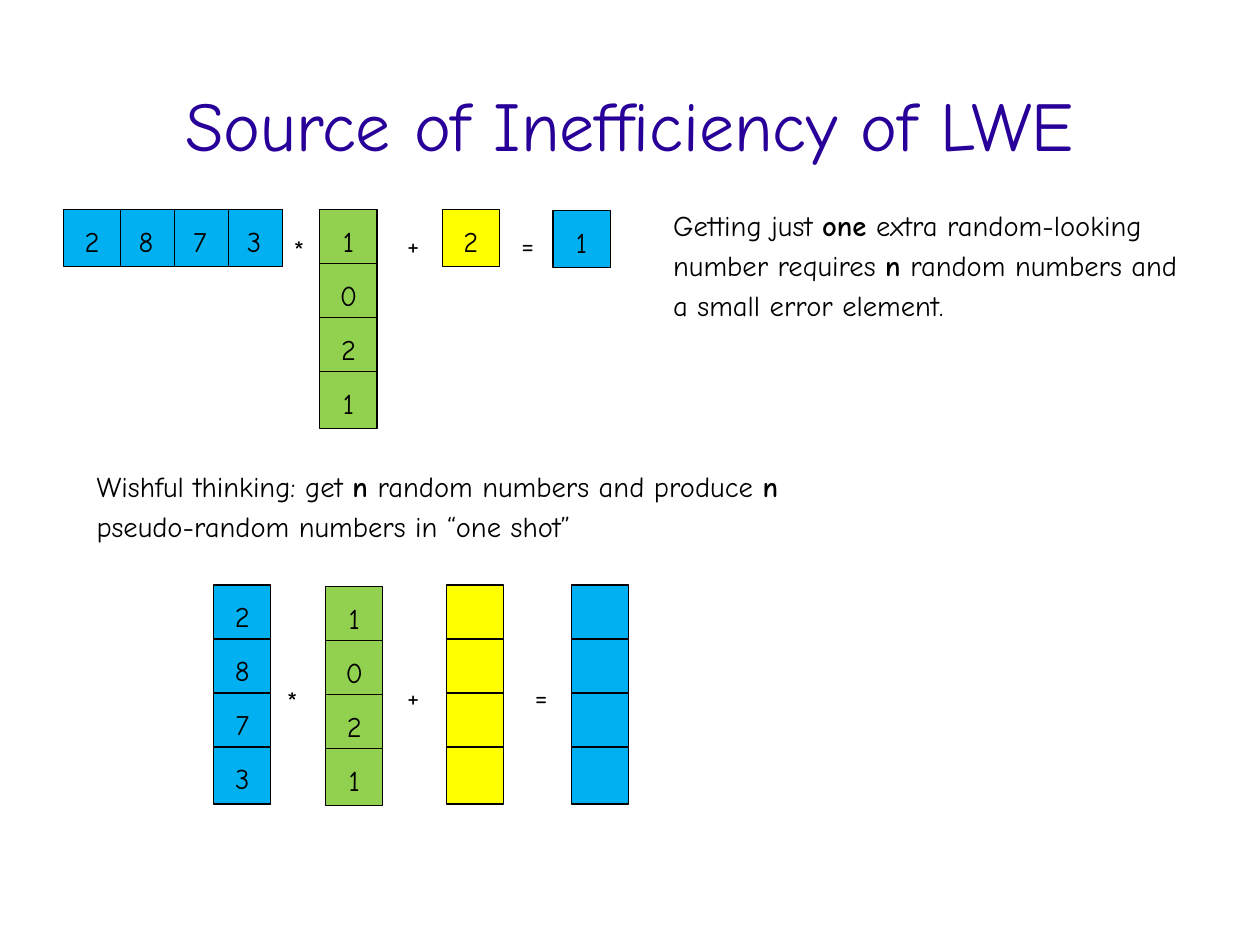
import pptx
import pptx.dml.color
import pptx.enum.shapes
import pptx.enum.text
import pptx.util
from dataclasses import dataclass

Cm = pptx.util.Cm
Pt = pptx.util.Pt
ALIGN = pptx.enum.text.PP_ALIGN
ANCHOR = pptx.enum.text.MSO_ANCHOR


@dataclass(frozen=True)
class Theme:
    font: str = "Comic Neue"
    title_size: int = 44
    body_size: int = 18
    line_spacing: float = 1.17
    title: str = "280099"
    ink: str = "000000"
    public: str = "00B0F0"
    secret: str = "92D050"
    error: str = "FFFF00"


THEME = Theme()
CELL = 1.27
PITCH = 1.2  # neighbouring cells overlap slightly


def rgb(value):
    return pptx.dml.color.RGBColor.from_string(value)


def write(frame, text, size=THEME.body_size, color=THEME.ink, align=ALIGN.LEFT):
    """Fill a frame with one paragraph; text between asterisk pairs is bold."""
    paragraph = frame.paragraphs[0]
    paragraph.alignment = align
    paragraph.line_spacing = THEME.line_spacing
    for index, part in enumerate(text.split("**")):
        run = paragraph.add_run()
        run.text = part
        font_format = {"name": THEME.font, "size": Pt(size), "bold": index % 2 == 1}
        for attribute, value in font_format.items():
            setattr(run.font, attribute, value)
        run.font.color.rgb = rgb(color)


def add_title(slide, left, top, width, height, text):
    title = slide.shapes.title
    place = {"left": left, "top": top, "width": width, "height": height}
    for attribute, value in place.items():
        setattr(title, attribute, Cm(value))
    frame_format = {
        "margin_left": 0, "margin_top": 0, "margin_right": 0, "margin_bottom": 0,
        "vertical_anchor": ANCHOR.MIDDLE,
        "auto_size": pptx.enum.text.MSO_AUTO_SIZE.NONE,
    }
    for attribute, value in frame_format.items():
        setattr(title.text_frame, attribute, value)
    write(title.text_frame, text, THEME.title_size, THEME.title, ALIGN.CENTER)


def add_note(slide, left, top, width, height, text):
    note = slide.shapes.add_textbox(Cm(left), Cm(top), Cm(width), Cm(height))
    note.text_frame.word_wrap = True
    write(note.text_frame, text)


def add_cell(slide, left, top, fill, number):
    cell = slide.shapes.add_shape(
        pptx.enum.shapes.MSO_SHAPE.RECTANGLE, Cm(left), Cm(top), Cm(CELL), Cm(CELL))
    cell.shadow.inherit = False
    cell.fill.solid()
    cell.fill.fore_color.rgb = rgb(fill)
    cell.line.color.rgb = rgb(THEME.ink)
    cell.line.width = Pt(0.75)
    if number.strip():
        cell.text_frame.word_wrap = False
        cell.text_frame.vertical_anchor = ANCHOR.MIDDLE
        write(cell.text_frame, number, align=ALIGN.CENTER)


def add_column(slide, left, top, fill, numbers):
    for index, number in enumerate(numbers):
        add_cell(slide, left, top + index * PITCH, fill, number)


def add_row(slide, left, top, fill, numbers):
    """Lay cells side by side, each one overlapping its right neighbour."""
    for index, number in reversed(list(enumerate(numbers))):
        add_cell(slide, left + index * PITCH, top, fill, number)


def add_equation(slide, left, top, vectors, operators):
    """Place vectors and operator signs at offsets from the top left corner."""
    for add_vector, dx, dy, fill, numbers in vectors:
        add_vector(slide, left + dx, top + dy, fill, numbers)
    for sign, dx, dy in operators:
        add_note(slide, left + dx, top + dy, 0.64, 1.14, sign)


def main():
    deck = pptx.Presentation()
    deck.slide_width, deck.slide_height = Cm(28), Cm(21)
    slide = deck.slides.add_slide(deck.slide_layouts[5])

    add_title(slide, 1.4, 0.97, 25.2, 3.25, "Source of Inefficiency of LWE")
    add_equation(
        slide, 1.41, 4.65,
        [(add_column, 5.7, 0, THEME.secret, "1021"),
         (add_row, 0, 0, THEME.public, "2873"),
         (add_column, 8.42, 0, THEME.error, "2"),
         (add_column, 10.88, 0.02, THEME.public, "1")],
        [("*", 4.86, 0.28), ("+", 7.38, 0.13), ("=", 9.92, 0.13)])
    add_note(slide, 14.71, 4.37, 12.07, 4.7,
             "Getting just **one** extra random-looking number requires **n** "
             "random numbers and a small error element.")
    add_note(slide, 1.9, 10.16, 16.51, 2.03,
             "Wishful thinking: get **n** random numbers and produce **n** "
             "pseudo-random numbers in “one shot”")
    unknown = " " * 4
    add_equation(
        slide, 4.75, 13,
        [(add_column, 0, 0, THEME.public, "2873"),
         (add_column, 2.49, 0.03, THEME.secret, "1021"),
         (add_column, 5.18, 0, THEME.error, unknown),
         (add_column, 7.95, 0, THEME.public, unknown)],
        [("*", 1.37, 1.94), ("+", 4.04, 1.83), ("=", 6.88, 1.83)])
    deck.save("out.pptx")


if __name__ == "__main__":
    main()
